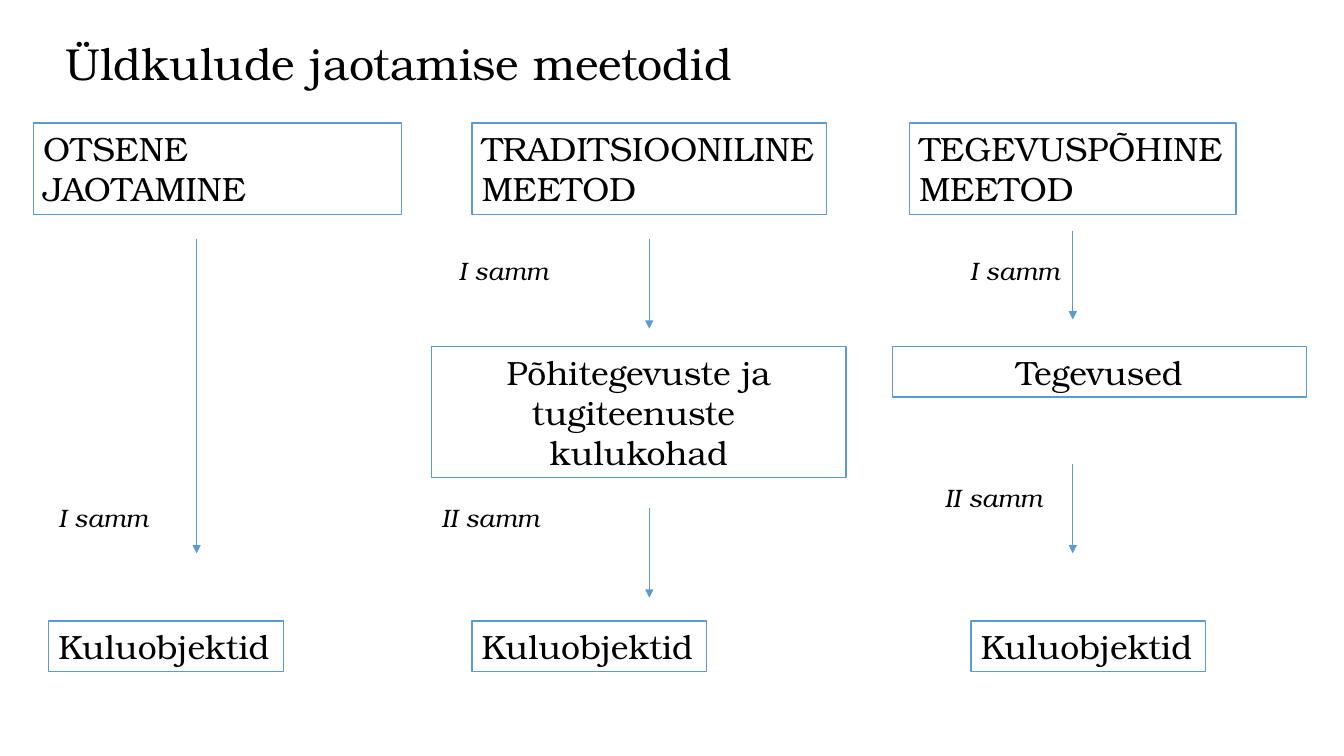
import pptx
import pptx.dml.color
import pptx.enum.shapes
import pptx.enum.text
import pptx.oxml.ns
import pptx.util
import lxml.etree

Inches = pptx.util.Inches
Pt = pptx.util.Pt
ALIGN = pptx.enum.text.PP_ALIGN
ANCHOR = pptx.enum.text.MSO_ANCHOR
AUTO_SIZE = pptx.enum.text.MSO_AUTO_SIZE

BLACK = pptx.dml.color.RGBColor(0x00, 0x00, 0x00)
WHITE = pptx.dml.color.RGBColor(0xFF, 0xFF, 0xFF)
BLUE = pptx.dml.color.RGBColor(0x5B, 0x9B, 0xD5)

TITLE_FONT = {"name": "TeX Gyre Bonum", "size": Pt(32)}
BOX_FONT = {"name": "TeX Gyre Bonum", "size": Pt(24)}
STEP_FONT = {"name": "TeX Gyre Bonum", "size": Pt(18), "italic": True}

COLUMN_TOP = 1.22
HEADING_HEIGHT = 0.91
MIDDLE_TOP = 2.22
MIDDLE_WIDTH = 4.11
OBJECTS_TOP = 4.94

COLUMNS = [
    {
        "left": 0.33,
        "heading": (0, 3.65, ["OTSENE JAOTAMINE"], True),
        "middle": None,
        "steps": [("I samm", 0.15, 3.71, 1.12)],
        "arrow_x": 1.62,
        "arrows": [(1.15, 4.27)],
        "objects_x": 0.15,
    },
    {
        "left": 4.28,
        "heading": (0.4, 3.52, ["TRADITSIOONILINE", "MEETOD"], False),
        "middle": (1.3, ["Põhitegevuste ja tugiteenuste ", "kulukohad"]),
        "steps": [("I samm", 0.17, 1.26, 1.12), ("II samm", 0, 3.71, 1.18)],
        "arrow_x": 2.16,
        "arrows": [(1.15, 2.04), (3.82, 4.71)],
        "objects_x": 0.4,
    },
    {
        "left": 8.85,
        "heading": (0.17, 3.24, ["TEGEVUSPÕHINE", "MEETOD"], False),
        "middle": (0.5, ["Tegevused"]),
        "steps": [("I samm", 0.67, 1.26, 1.12), ("II samm", 0.42, 3.52, 1.18)],
        "arrow_x": 1.79,
        "arrows": [(1.07, 1.95), (3.38, 4.27)],
        "objects_x": 0.78,
    },
]


def write_text(frame, lines, font, wrap, align=ALIGN.LEFT):
    frame.word_wrap = wrap
    frame.auto_size = AUTO_SIZE.SHAPE_TO_FIT_TEXT
    frame.vertical_anchor = ANCHOR.TOP
    for index, line in enumerate(lines):
        paragraph = frame.add_paragraph() if index else frame.paragraphs[0]
        paragraph.alignment = align
        run = paragraph.add_run()
        run.text = line
        run.font.color.rgb = BLACK
        for attribute, value in font.items():
            setattr(run.font, attribute, value)


def add_box(slide, left, top, width, height, lines, wrap, align=ALIGN.LEFT):
    box = slide.shapes.add_shape(
        pptx.enum.shapes.MSO_SHAPE.RECTANGLE,
        *map(Inches, (left, top, width, height)))
    box.shadow.inherit = False
    box.fill.solid()
    box.fill.fore_color.rgb = WHITE
    box.line.color.rgb = BLUE
    box.line.width = Pt(1)
    write_text(box.text_frame, lines, BOX_FONT, wrap, align)


def add_step(slide, left, top, width, label):
    step = slide.shapes.add_textbox(*map(Inches, (left, top, width, 0.4)))
    write_text(step.text_frame, [label], STEP_FONT, False)


def add_arrow(slide, x, start, end):
    arrow = slide.shapes.add_connector(
        pptx.enum.shapes.MSO_CONNECTOR.STRAIGHT,
        *map(Inches, (x, start, x, end)))
    arrow.line.color.rgb = BLUE
    arrow.line.width = Pt(0.5)
    qn = pptx.oxml.ns.qn
    properties = arrow.line._get_or_add_ln().getparent()
    lxml.etree.SubElement(
        properties.find(qn("a:ln")), qn("a:tailEnd"), type="triangle")
    lxml.etree.SubElement(properties, qn("a:effectLst"))


def add_title(slide, left, top, width, height):
    title = slide.shapes.add_textbox(*map(Inches, (left, top, width, height)))
    frame = title.text_frame
    write_text(frame, ["Üldkulude jaotamise meetodid"], TITLE_FONT, True)
    frame.auto_size = AUTO_SIZE.NONE
    frame.vertical_anchor = ANCHOR.MIDDLE
    frame.paragraphs[0].line_spacing = 0.9


def add_method_column(slide, left, top, column):
    offset, width, lines, wrap = column["heading"]
    add_box(slide, left + offset, top, width, HEADING_HEIGHT, lines, wrap)
    if column["middle"]:
        height, lines = column["middle"]
        add_box(slide, left, top + MIDDLE_TOP, MIDDLE_WIDTH, height, lines,
                True, ALIGN.CENTER)
    add_box(slide, left + column["objects_x"], top + OBJECTS_TOP, 2.33, 0.5,
            ["Kuluobjektid"], False)
    for label, x, y, width in column["steps"]:
        add_step(slide, left + x, top + y, width, label)
    for start, end in column["arrows"]:
        add_arrow(slide, left + column["arrow_x"], top + start, top + end)


def main():
    presentation = pptx.Presentation()
    presentation.slide_width = Inches(13.33)
    presentation.slide_height = Inches(7.5)
    slide = presentation.slides.add_slide(presentation.slide_layouts[6])
    add_title(slide, 0.55, 0.33, 7.45, 0.64)
    for column in COLUMNS:
        add_method_column(slide, column["left"], COLUMN_TOP, column)
    presentation.save("out.pptx")


if __name__ == "__main__":
    main()
